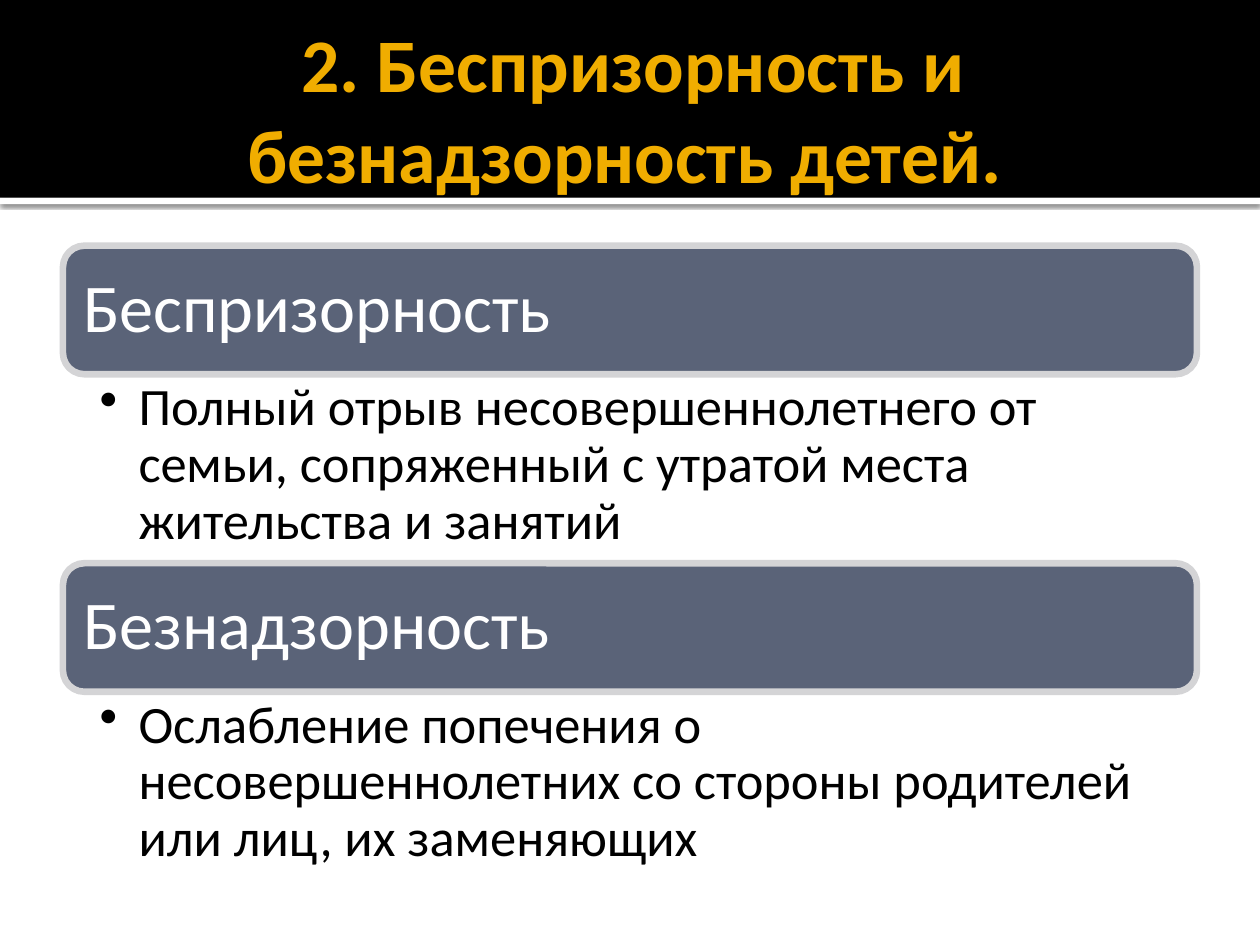
from dataclasses import dataclass

from lxml.etree import SubElement
from pptx import Presentation
from pptx.dml.color import RGBColor
from pptx.enum.shapes import MSO_SHAPE
from pptx.enum.text import MSO_ANCHOR, MSO_AUTO_SIZE, PP_ALIGN
from pptx.oxml.ns import qn
from pptx.util import Inches, Pt


@dataclass(frozen=True)
class Theme:
    """Colours, font and type sizes of the deck."""
    font: str = "Calibri"
    black: RGBColor = RGBColor(0, 0, 0)
    white: RGBColor = RGBColor(255, 255, 255)
    gold: RGBColor = RGBColor(0xF0, 0xAD, 0x00)
    slate: RGBColor = RGBColor(0x5A, 0x63, 0x78)
    border: RGBColor = RGBColor(0xD4, 0xD4, 0xD6)
    title_size: Pt = Pt(43.2)
    term_size: Pt = Pt(39)
    meaning_size: Pt = Pt(30)


THEME = Theme()
TITLE = "2. Беспризорность и безнадзорность детей. "
TERMS = {
    "Беспризорность": "Полный отрыв несовершеннолетнего от семьи, "
                      "сопряженный с утратой места жительства и занятий",
    "Безнадзорность": "Ослабление попечения о несовершеннолетних "
                      "со стороны родителей или лиц, их заменяющих",
}


def set_values(target, values):
    """Set each named attribute of the target."""
    for name, value in values.items():
        setattr(target, name, value)


def write_text(shape, text, size, color, insets, anchor, align=PP_ALIGN.LEFT,
               spacing=None, bold=False):
    """Write one formatted paragraph into the shape and return it."""
    left, top, right, bottom = (Inches(inset) for inset in insets)
    frame = shape.text_frame
    set_values(frame, {
        "word_wrap": True, "auto_size": MSO_AUTO_SIZE.NONE,
        "vertical_anchor": anchor, "margin_left": left, "margin_top": top,
        "margin_right": right, "margin_bottom": bottom,
    })
    para = frame.paragraphs[0]
    set_values(para, {"alignment": align, "line_spacing": spacing})
    span = para.add_run()
    span.text = text
    set_values(span.font, {"name": THEME.font, "size": size, "bold": bold})
    span.font.color.rgb = color
    return para


def add_panel(page, kind, box, fill):
    """Add a plain filled shape without outline or shadow."""
    panel = page.shapes.add_shape(kind, *map(Inches, box))
    panel.shadow.inherit = False
    panel.fill.solid()
    panel.fill.fore_color.rgb = fill
    panel.line.fill.background()
    return panel


def add_soft_shadow(shape):
    """Give the shape a soft shadow just below its lower edge."""
    effects = shape.element.spPr.find(qn("a:effectLst"))
    shadow = SubElement(effects, qn("a:outerShdw"), blurRad=str(Pt(2.5)),
                        dist=str(Pt(0.8)), dir="5400000", rotWithShape="0")
    color = SubElement(shadow, qn("a:srgbClr"), val=str(THEME.black))
    SubElement(color, qn("a:alpha"), val="60000")


def add_bullet(para, indent):
    """Give the paragraph a round bullet with a hanging indent."""
    properties = para._p.get_or_add_pPr()
    properties.set("marL", str(indent))
    properties.set("indent", str(-indent))
    SubElement(properties, qn("a:buChar"), char="•")


def build_header(page, box):
    """Place the black band, its white edge and the title."""
    left, top, width, height = box
    edge = add_panel(page, MSO_SHAPE.RECTANGLE,
                     (left, top + height, width, 0.05), THEME.white)
    add_soft_shadow(edge)
    band = add_panel(page, MSO_SHAPE.RECTANGLE, box, THEME.black)
    title = page.shapes.title
    for panel in (edge, band):
        title.element.addprevious(panel.element)
    set_values(title, {
        "left": Inches(left + 0.5), "top": Inches(top + 0.17),
        "width": Inches(width - 1), "height": Inches(height - 0.2),
    })
    write_text(title, TITLE, THEME.title_size, THEME.gold,
               (0.1, 0.05, 0.05, 0.05), MSO_ANCHOR.MIDDLE,
               align=PP_ALIGN.CENTER, bold=True)


def build_definition(page, box, term, meaning):
    """Place a term bar with its bulleted meaning below."""
    left, top, width, height = box
    bar_height = 1.02
    bar = add_panel(page, MSO_SHAPE.ROUNDED_RECTANGLE,
                    (left, top, width, bar_height), THEME.slate)
    bar.line.color.rgb = THEME.border
    bar.line.width = Pt(3.78)
    write_text(bar, term, THEME.term_size, THEME.white, (0.11,) * 4,
               MSO_ANCHOR.MIDDLE, spacing=0.9)
    body = page.shapes.add_textbox(*map(Inches, (
        left, top + bar_height, width, height - bar_height)))
    para = write_text(body, meaning, THEME.meaning_size, THEME.black,
                      (0.29, 0.05, 0.3, 0.05), MSO_ANCHOR.TOP, spacing=0.9)
    add_bullet(para, Inches(0.31))


def build_definitions(page, box):
    """Stack the definitions in equal rows."""
    left, top, width, height = box
    row = height / len(TERMS)
    for index, (term, meaning) in enumerate(TERMS.items()):
        build_definition(page, (left, top + index * row, width, row),
                         term, meaning)


def main():
    """Build the deck and save it."""
    deck = Presentation()
    set_values(deck, {"slide_width": Inches(10), "slide_height": Inches(7.5)})
    page = deck.slides.add_slide(deck.slide_layouts.get_by_name("Title Only"))
    build_header(page, (0, 0, 10, 1.57))
    build_definitions(page, (0.5, 1.95, 9, 5.04))
    deck.save("out.pptx")


if __name__ == "__main__":
    main()
